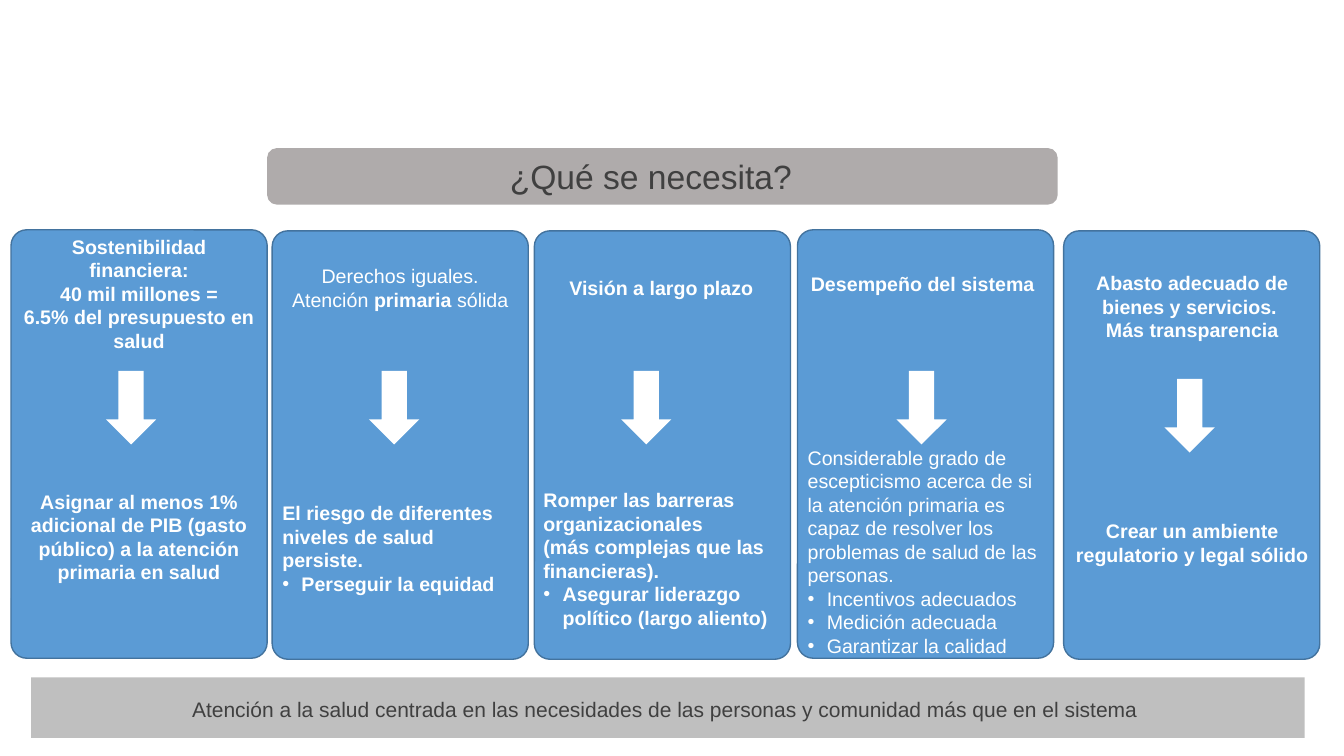
from lxml import etree
from pptx import Presentation
from pptx import util as u
from pptx.dml.color import RGBColor
from pptx.enum import shapes, text
from pptx.oxml.ns import qn

PX = 9144
KIND = shapes.MSO_SHAPE
MID, LEFT = text.PP_ALIGN.CENTER, text.PP_ALIGN.LEFT
WHITE, DARK = "FFFFFF", "404040"
FRAME = {"word_wrap": True, "auto_size": text.MSO_AUTO_SIZE.NONE,
         "vertical_anchor": text.MSO_ANCHOR.TOP,
         "margin_left": 10 * PX, "margin_right": 10 * PX,
         "margin_top": 5 * PX, "margin_bottom": 5 * PX}

CARDS = [
    {"at": (11, 228), "dx": 0, "wide": 254, "arrow": (94, 140),
     "head": (0, 128, MID, True, ["Sostenibilidad financiera:", "40 mil millones =",
                                  "6.5% del presupuesto en salud"]),
     "foot": (253, 104, MID, True, ["Asignar al menos 1% adicional de PIB (gasto público) "
                                    "a la atención primaria en salud"])},
    {"at": (270, 229), "dx": 0, "wide": 254, "arrow": (96, 139),
     "head": (28, 57, MID, False, ["Derechos iguales.", "Atención |primaria| sólida"]),
     "foot": (263, 104, LEFT, True, ["El riesgo de diferentes niveles de salud persiste.",
                                     "•Perseguir la equidad"])},
    {"at": (530, 229), "dx": -1, "wide": 254, "arrow": (86, 139),
     "head": (40, 34, MID, True, ["Visión a largo plazo"]),
     "foot": (250, 151, LEFT, True, ["Romper las barreras organizacionales",
                                     "(más complejas que las financieras).",
                                     "•Asegurar liderazgo político (largo aliento)"])},
    {"at": (791, 228), "dx": 0, "wide": 254, "arrow": (98, 140),
     "head": (37, 34, MID, True, ["Desempeño del sistema "]),
     "foot": (209, 222, LEFT, False, ["Considerable grado de escepticismo acerca de si la atención "
                                      "primaria es capaz de resolver los problemas de salud de "
                                      "las personas.", "•Incentivos adecuados",
                                      "•Medición adecuada", "•Garantizar la calidad"])},
    {"at": (1055, 229), "dx": 2, "wide": 251, "arrow": (100, 147),
     "head": (35, 81, MID, True, ["Abasto adecuado de bienes y servicios. ", "Más transparencia"]),
     "foot": (281, 57, MID, True, ["Crear un ambiente regulatorio y legal sólido"])},
]


def put(obj, vals):
    """Set every attribute in a dict of format values."""
    for key, val in vals.items():
        setattr(obj, key, val)


def hue(code):
    """Turn a hex string into a colour."""
    return RGBColor.from_string(code)


def scale(box):
    """Turn px lengths into EMU."""
    return [u.Emu(n * PX) for n in box]


def block(slide, kind, box, fill, line=None, curve=None):
    """Draw a filled preset shape."""
    shape = slide.shapes.add_shape(kind, *scale(box))
    shape.shadow.inherit = False
    shape.fill.solid()
    shape.fill.fore_color.rgb = hue(fill)
    if line:
        shape.line.color.rgb = hue(line)
        shape.line.width = u.Pt(1)
    else:
        shape.line.fill.background()
    if curve:
        shape.adjustments[0] = curve


def write(slide, box, lines, size=14, code=WHITE, bold=False, align=MID, holder=None):
    """Fill a text box, or a placeholder brought to the front, with paragraphs."""
    shape = holder or slide.shapes.add_textbox(*scale(box))
    if holder:
        put(holder, dict(zip(("left", "top", "width", "height"), scale(box))))
        slide.shapes._spTree.append(holder._element)
    frame = shape.text_frame
    put(frame, FRAME)
    for n, line in enumerate(lines):
        para = frame.add_paragraph() if n else frame.paragraphs[0]
        props = para._p.get_or_add_pPr()
        dot = line.startswith("•")
        inset = 19 * PX if dot else 0
        props.set("marL", str(inset))
        props.set("indent", str(-inset))
        if dot:
            etree.SubElement(props, qn("a:buFont"), typeface="Arial")
            etree.SubElement(props, qn("a:buChar"), char="•")
        else:
            etree.SubElement(props, qn("a:buNone"))
        put(para, {"alignment": align, "space_before": u.Pt(0),
                   "space_after": u.Pt(0), "line_spacing": 1.0})
        for k, part in enumerate(line.lstrip("•").split("|")):
            run = para.add_run()
            run.text = part
            put(run.font, {"name": "Arial", "size": u.Pt(size), "bold": bold or k % 2 == 1})
            run.font.color.rgb = hue(code)


def banner(slide, box):
    """Draw the title pill."""
    x, y, w, h = box
    block(slide, KIND.ROUNDED_RECTANGLE, box, "AFABAB")
    write(slide, (x + 188, y + 3, 385, h - 6), ["¿Qué se necesita?"], 24, DARK,
          holder=slide.shapes.title)


def column(slide, box, card, spare):
    """Draw one card with its heading, arrow and answer."""
    x, y = box[:2]
    block(slide, KIND.ROUNDED_RECTANGLE, box, "5B9BD5", "43739E", 0.061)
    for key in ("head", "foot"):
        drop, high, align, bold, lines = card[key]
        holder = spare.pop(0) if lines[-1].startswith("•") else None
        write(slide, (x + card["dx"], y + drop, card["wide"], high), lines,
              bold=bold, align=align, holder=holder)
    right, down = card["arrow"]
    block(slide, KIND.DOWN_ARROW, (x + right, y + down, 50, 73), WHITE)


def footer(slide, box):
    """Draw the closing strip."""
    x, y, w, h = box
    block(slide, KIND.RECTANGLE, box, "BFBFBF")
    write(slide, (x, y + 14, w, 35), ["Atención a la salud centrada en las necesidades de las "
                                      "personas y comunidad más que en el sistema "], 15, DARK)


def main():
    """Build and save the slide."""
    deck = Presentation()
    put(deck, {"slide_width": 1333 * PX, "slide_height": 750 * PX})
    slide = deck.slides.add_slide(deck.slide_layouts[4])
    spare = list(slide.placeholders)[1:]
    banner(slide, (265, 147, 784, 56))
    for card in CARDS:
        column(slide, (*card["at"], 254, 425), card, spare)
    footer(slide, (31, 672, 1263, 60))
    for rest in spare:
        slide.shapes._spTree.remove(rest._element)
    deck.save("out.pptx")


if __name__ == "__main__":
    main()
